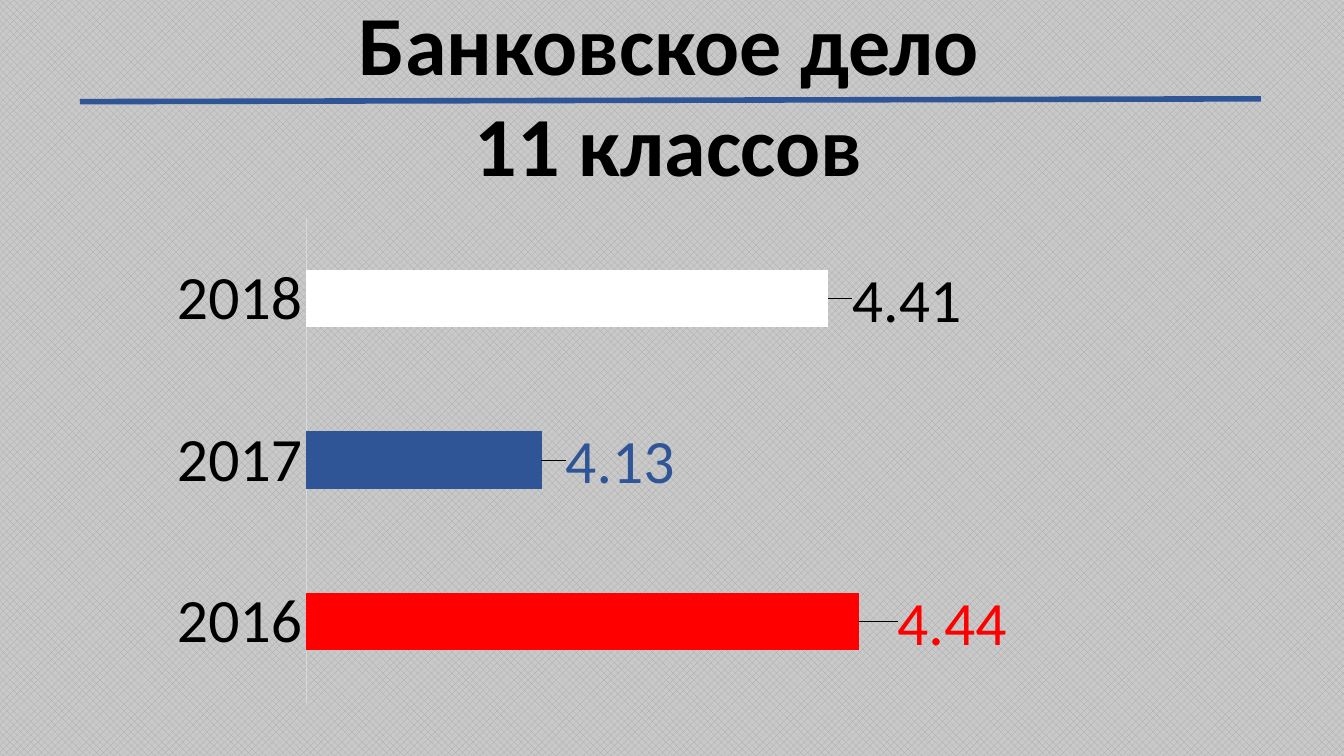
from lxml.etree import SubElement, fromstring
from pptx import Presentation
from pptx.chart.data import CategoryChartData
from pptx.dml.color import RGBColor
from pptx.enum.chart import XL_CHART_TYPE, XL_LABEL_POSITION, XL_TICK_MARK
from pptx.enum.dml import MSO_PATTERN
from pptx.enum.shapes import MSO_CONNECTOR
from pptx.enum.text import MSO_AUTO_SIZE, PP_ALIGN
from pptx.oxml.ns import qn
from pptx.util import Pt

FONT = "Calibri"
COLORS = {
    "black": "000000",
    "white": "FFFFFF",
    "red": "FF0000",
    "blue": "2F5597",
    "axis": "D9D9D9",
    "weave": "A6A6A6",
    "ground": "C9C9C9",
}
TITLE_LINES = ["Банковское дело", "11 классов"]
SERIES_NAME = "Series 1"
SCORES = [
    {"year": "2016", "score": 4.44, "bar": "red", "label": "red", "shift": 0.035},
    {"year": "2017", "score": 4.13, "bar": "blue", "label": "blue", "shift": 0.02},
    {"year": "2018", "score": 4.41, "bar": "white", "label": "black", "shift": 0.02},
]
PLOT_LAYOUT = {
    "layoutTarget": "inner", "xMode": "edge", "yMode": "edge",
    "x": 0.234, "y": 0.033, "w": 0.634, "h": 0.94,
}
LEADER_LINES = (
    '<c:extLst xmlns:c="http://schemas.openxmlformats.org/drawingml/2006/chart">'
    '<c:ext uri="{CE6537A1-D6FC-4f65-9D91-7224C49458BB}" '
    'xmlns:c15="http://schemas.microsoft.com/office/drawing/2012/chart">'
    '<c15:showLeaderLines val="1"/></c:ext></c:extLst>'
)


def color(name):
    return RGBColor.from_string(COLORS[name])


def style_font(font, size, color_name, bold=False):
    font.name = FONT
    font.size = Pt(size)
    font.bold = bold
    font.color.rgb = color(color_name)


def set_layout(parent, position, settings):
    for old_layout in parent.findall(qn("c:layout")):
        parent.remove(old_layout)
    layout = parent.makeelement(qn("c:layout"))
    parent.insert(position, layout)
    manual = SubElement(layout, qn("c:manualLayout"))
    for tag, value in settings.items():
        SubElement(manual, qn(f"c:{tag}")).set("val", str(value))


def add_rule(slide):
    rule = slide.shapes.add_connector(
        MSO_CONNECTOR.STRAIGHT, Pt(57), Pt(72.6), Pt(900.7), Pt(70.6)
    )
    rule.line.color.rgb = color("blue")
    rule.line.width = Pt(4)
    SubElement(rule.element.spPr, qn("a:effectLst"))


def add_score_chart(slide):
    data = CategoryChartData(number_format="0.00")
    data.categories = [item["year"] for item in SCORES]
    data.add_series(SERIES_NAME, [item["score"] for item in SCORES])
    chart = slide.shapes.add_chart(
        XL_CHART_TYPE.BAR_CLUSTERED, Pt(57), Pt(143.3), Pt(692), Pt(368.6), data
    ).chart
    chart.has_title = False
    chart.has_legend = False
    style_font(chart.font, 10, "black")

    years = chart.category_axis
    years.major_tick_mark = XL_TICK_MARK.NONE
    years.format.line.color.rgb = color("axis")
    years.format.line.width = Pt(0.75)
    style_font(years.tick_labels.font, 44, "black")

    values = chart.value_axis
    values.minimum_scale = 3.9
    values.maximum_scale = 4.5
    values.has_major_gridlines = False
    values.visible = False

    plot = chart.plots[0]
    plot.gap_width = 182
    plot.vary_by_categories = False
    series = plot.series[0]
    series.data_labels.show_value = True
    for index, item in enumerate(SCORES):
        point = series.points[index]
        point.format.fill.solid()
        point.format.fill.fore_color.rgb = color(item["bar"])
        style_font(point.data_label.font, 44, item["label"])
        point.data_label.position = XL_LABEL_POSITION.OUTSIDE_END

    for label, item in zip(chart.element.xpath(".//c:dLbl"), SCORES):
        set_layout(label, 1, {"x": item["shift"], "y": 0.005})
    chart.element.xpath(".//c:ser/c:dLbls")[0].append(fromstring(LEADER_LINES))
    set_layout(chart.element.xpath(".//c:plotArea")[0], 0, PLOT_LAYOUT)


def add_title(slide):
    box = slide.shapes.add_textbox(Pt(44), Pt(-9.4), Pt(867.6), Pt(152.6))
    frame = box.text_frame
    frame.word_wrap = True
    frame.auto_size = MSO_AUTO_SIZE.SHAPE_TO_FIT_TEXT
    for index, line in enumerate(TITLE_LINES):
        paragraph = frame.add_paragraph() if index else frame.paragraphs[0]
        paragraph.alignment = PP_ALIGN.CENTER
        run = paragraph.add_run()
        run.text = line
        style_font(run.font, 60, "black", bold=True)


def main():
    presentation = Presentation()
    presentation.slide_width = Pt(960)
    presentation.slide_height = Pt(540)
    slide = presentation.slides.add_slide(presentation.slide_layouts[6])
    background = slide.background.fill
    background.patterned()
    background.pattern = MSO_PATTERN.PERCENT_50
    background.fore_color.rgb = color("weave")
    background.back_color.rgb = color("ground")
    add_rule(slide)
    add_score_chart(slide)
    add_title(slide)
    presentation.save("out.pptx")


if __name__ == "__main__":
    main()
